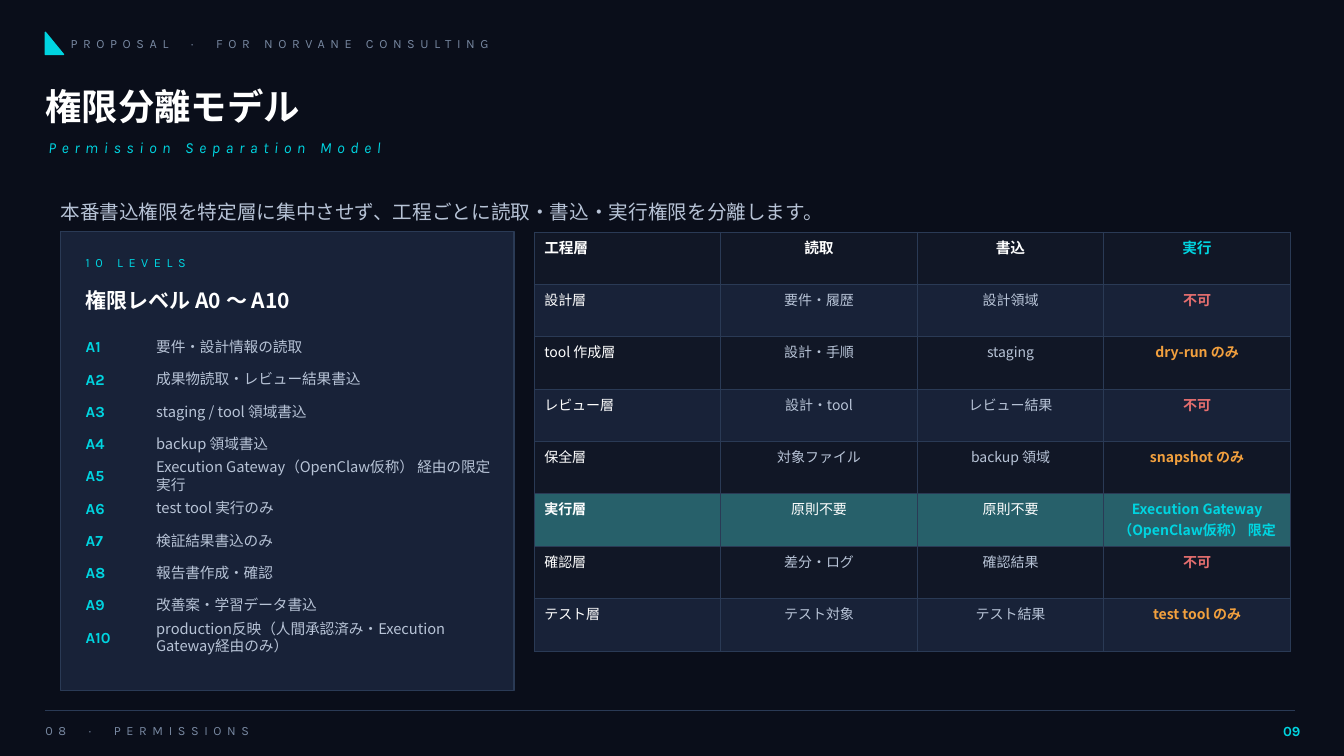
import collections

import pptx
import pptx.dml.color
import pptx.enum.shapes
import pptx.enum.text
import pptx.oxml.ns
import pptx.util
from lxml import etree

RGB = pptx.dml.color.RGBColor
ALIGN = pptx.enum.text.PP_ALIGN
SHAPE = pptx.enum.shapes.MSO_SHAPE
qn = pptx.oxml.ns.qn
Pt = pptx.util.Pt

NIGHT = RGB(0x0A, 0x0E, 0x1A)
DARK = RGB(0x11, 0x17, 0x26)
NAVY = RGB(0x18, 0x22, 0x38)
EDGE = RGB(0x2A, 0x3A, 0x55)
TEAL = RGB(0x27, 0x60, 0x6A)
CYAN = RGB(0x00, 0xD4, 0xE0)
WHITE = RGB(0xFF, 0xFF, 0xFF)
PALE = RGB(0xB7, 0xC3, 0xD6)
GREY = RGB(0x77, 0x87, 0xA0)
RED = RGB(0xE6, 0x6F, 0x6F)
AMBER = RGB(0xF2, 0xA0, 0x3E)

LATIN = "Karla"
CJK = "Noto Sans CJK JP"

UNIT = pptx.util.Inches(0.1)  # one grid step, across and down
COLS, ROWS = 133.33, 75

Box = collections.namedtuple("Box", "x y w h")

LEVELS = [
    "要件・設計情報の読取",
    "成果物読取・レビュー結果書込",
    "staging / tool 領域書込",
    "backup 領域書込",
    "Execution Gateway（OpenClaw仮称） 経由の限定実行",
    "test tool 実行のみ",
    "検証結果書込のみ",
    "報告書作成・確認",
    "改善案・学習データ書込",
    "production反映（人間承認済み・Execution Gateway経由のみ）",
]
RIGHTS = [
    ("工程層", "読取", "書込", "実行"),
    ("設計層", "要件・履歴", "設計領域", "不可"),
    ("tool 作成層", "設計・手順", "staging", "dry-run のみ"),
    ("レビュー層", "設計・tool", "レビュー結果", "不可"),
    ("保全層", "対象ファイル", "backup 領域", "snapshot のみ"),
    ("実行層", "原則不要", "原則不要", "Execution Gateway（OpenClaw仮称） 限定"),
    ("確認層", "差分・ログ", "確認結果", "不可"),
    ("テスト層", "テスト対象", "テスト結果", "test tool のみ"),
]
GATE = 5  # the highlighted row of RIGHTS


def part(box, x, y, w, h):
    """Return a box placed from the top left corner of another."""
    return Box(box.x + x, box.y + y, w, h)


def emu(box):
    return [round(side * UNIT) for side in box]


def write(frame, text, size=10, color=PALE, face=CJK, bold=False,
          italic=False, track=0, align=ALIGN.LEFT):
    para = frame.paragraphs[0]
    para.alignment = align
    run = para.add_run()
    run.text = text
    font = run.font
    font.size, font.name = Pt(size), face
    font.bold, font.italic = bold, italic
    font.color.rgb = color
    props = run._r.get_or_add_rPr()
    etree.SubElement(props, qn("a:ea")).set("typeface", face)
    if track:
        props.set("spc", str(track * 100))


def label(slide, box, text, **style):
    frame = slide.shapes.add_textbox(*emu(box)).text_frame
    frame.word_wrap = True
    frame.vertical_anchor = pptx.enum.text.MSO_ANCHOR.MIDDLE
    frame.margin_left = frame.margin_right = 0
    frame.margin_top = frame.margin_bottom = 0
    write(frame, text, **style)


def block(slide, kind, box, fill, edge, width):
    shape = slide.shapes.add_shape(kind, *emu(box))
    shape.shadow.inherit = False
    shape.fill.solid()
    shape.fill.fore_color.rgb = fill
    shape.line.color.rgb = edge
    shape.line.width = Pt(width)


def border(cell):
    props = cell._tc.get_or_add_tcPr()
    for side in ("a:lnL", "a:lnR", "a:lnT", "a:lnB"):
        line = etree.SubElement(props, qn(side), w=str(Pt(0.5)))
        fill = etree.SubElement(line, qn("a:solidFill"))
        etree.SubElement(fill, qn("a:srgbClr"), val=str(EDGE))


def header(slide, box):
    block(slide, SHAPE.RIGHT_TRIANGLE, part(box, 0, 0.5, 1.8, 2.2), CYAN, CYAN, 1)
    label(slide, part(box, 2.5, 0, 60, 3.2),
          "PROPOSAL  ·  FOR NORVANE CONSULTING",
          size=9, color=GREY, face=LATIN, track=4)
    label(slide, part(box, 0, 4.8, 120, 6), "権限分離モデル",
          size=26, color=WHITE, bold=True)
    label(slide, part(box, 0.3, 10.3, 120, 3.2), "Permission Separation Model",
          size=11, color=CYAN, face=LATIN, italic=True, track=4)
    label(slide, part(box, 1.5, 15.8, 122, 5),
          "本番書込権限を特定層に集中させず、工程ごとに読取・書込・実行権限を分離します。",
          size=14)


def levels(slide, box):
    block(slide, SHAPE.RECTANGLE, box, NAVY, EDGE, 0.75)
    label(slide, part(box, 2.5, 1.5, 30, 3), "10 LEVELS",
          size=9, color=CYAN, face=LATIN, track=4)
    label(slide, part(box, 2.5, 4.5, 41, 4.5), "権限レベル A0 〜 A10",
          size=15, color=WHITE, bold=True)
    for i, text in enumerate(LEVELS):
        y = 10 + 3.2 * i
        label(slide, part(box, 2.5, y, 6, 2.8), f"A{i + 1}",
              size=11, color=CYAN, face=LATIN, bold=True)
        label(slide, part(box, 9.5, y, 34, 2.8), text, size=10.5)


def look(row, col, text):
    """Return the colour and weight of a table cell's text."""
    last = col == 3
    if row == 0:
        return (CYAN if last else WHITE), True
    if last:
        color = RED if text == "不可" else CYAN if row == GATE else AMBER
        return color, True
    if row == GATE:
        return WHITE, col == 0
    return (WHITE if col == 0 else PALE), False


def matrix(slide, box):
    table = slide.shapes.add_table(len(RIGHTS), 4, *emu(box)).table
    table.first_row = table.horz_banding = False
    for col, width in zip(table.columns, (18.5, 19.5, 18.5, 18.5)):
        col.width = round(width * UNIT)
    for r, texts in enumerate(RIGHTS):
        table.rows[r].height = round(box.h / len(RIGHTS) * UNIT)
        for c, text in enumerate(texts):
            cell = table.cell(r, c)
            border(cell)
            cell.fill.solid()
            cell.fill.fore_color.rgb = TEAL if r == GATE else (DARK, NAVY)[r % 2]
            color, bold = look(r, c, text)
            write(cell.text_frame, text, size=10 if r else 10.5, color=color,
                  bold=bold, align=ALIGN.CENTER if c else ALIGN.LEFT)


def footer(slide, box):
    x, y, w, _ = emu(box)
    rule = slide.shapes.add_connector(
        pptx.enum.shapes.MSO_CONNECTOR.STRAIGHT, x, y, x + w, y)
    rule.line.color.rgb = EDGE
    rule.line.width = Pt(0.6)
    etree.SubElement(rule._element.spPr, qn("a:effectLst"))
    label(slide, part(box, 0, 0.5, 90, 3), "08  ·  PERMISSIONS",
          size=9, color=GREY, face=LATIN, track=4)
    label(slide, part(box, 120, 0.5, 4.5, 3), "09",
          color=CYAN, face=LATIN, bold=True, align=ALIGN.RIGHT)


def main():
    deck = pptx.Presentation()
    deck.slide_width = round(COLS * UNIT)
    deck.slide_height = ROWS * UNIT
    slide = deck.slides.add_slide(deck.slide_layouts[6])
    slide.background.fill.solid()
    slide.background.fill.fore_color.rgb = NIGHT
    header(slide, Box(4.5, 2.7, 124, 20.8))
    levels(slide, Box(6, 23, 45, 45.5))
    matrix(slide, Box(53, 23, 75, 41.6))
    footer(slide, Box(4.5, 70.5, 124, 3.5))
    deck.save("out.pptx")


if __name__ == "__main__":
    main()
